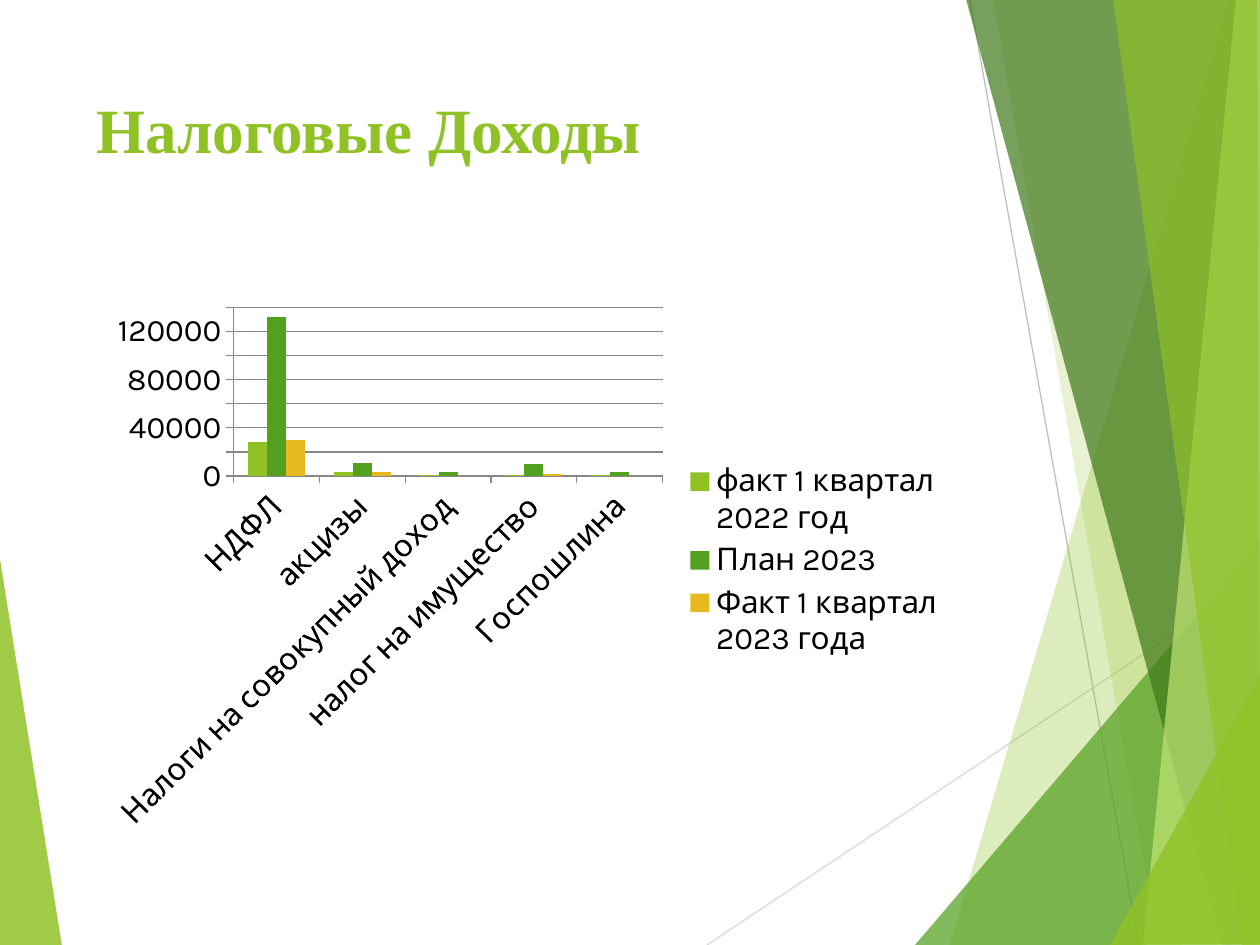
from lxml import etree
from pptx import Presentation
from pptx import util as u
from pptx.chart.data import CategoryChartData
from pptx.dml.color import RGBColor
from pptx.enum import chart as ch, shapes, text
from pptx.oxml.ns import qn

W, H = 1260, 945
LIME, GREEN, GOLD = "90C226", "54A021", "E6B91E"

# Decoration, back to front: outline in px, colour, opacity in percent
LEFT_WEDGE = ([(-1, 553), (62, 946), (-1, 945)], LIME, 85)
RIGHT_BANDS = [
    ([(1229, 0), (950, 945), (1262, 946), (1261, 1)], LIME, 30),
    ([(993, -1), (1158, 945), (1261, 945), (1261, -1)], LIME, 20),
    ([(915, 945), (1260, 541), (1261, 945)], GREEN, 72),
    ([(966, -1), (1222, 945), (1261, 944), (1261, -1)], "3F7819", 70),
    ([(1236, -1), (1143, 945), (1261, 945), (1260, -1)], "C0E474", 70),
    ([(1113, -1), (1242, 945), (1260, 945), (1257, -1)], LIME, 65),
    ([(1110, 945), (1261, 674), (1261, 944)], LIME, 80),
]
LINES = [((707, 945), (1261, 576), "D9D9D9"), ((970, 0), (1139, 945), "BFBFBF")]

CATEGORIES = ["НДФЛ", "акцизы", "Налоги на совокупный доход",
              "налог на имущество", "Госпошлина"]
SERIES = [
    ("факт 1 квартал 2022 год", [28000, 3000, 1000, 1000, 1000], LIME),
    ("План 2023", [132000, 11000, 3000, 10000, 3000], GREEN),
    ("Факт 1 квартал 2023 года", [30000, 3000, 0, 2000, 0], GOLD),
]


def px(n):
    return u.Emu(round(n * 914400 / 126))


def rgb(value):
    return RGBColor.from_string(value)


def add_band(s, points, color, opacity):
    builder = s.shapes.build_freeform(*points[0], scale=914400 / 126)
    builder.add_line_segments(points[1:], close=True)
    sp = builder.convert_to_shape()
    sp.shadow.inherit = False
    sp.line.fill.background()
    sp.fill.solid()
    sp.fill.fore_color.rgb = rgb(color)
    clr = sp.fill._xPr.find(qn("a:solidFill"))[0]
    etree.SubElement(clr, qn("a:alpha")).set("val", str(opacity * 1000))


def add_line(s, start, end, color):
    line = s.shapes.add_connector(shapes.MSO_CONNECTOR.STRAIGHT,
                                  *map(px, start + end))
    line.line.color.rgb = rgb(color)
    line.line.width = u.Pt(0.75)
    etree.SubElement(line._element.spPr, qn("a:effectLst"))


def set_title(s, words):
    title = s.shapes.title
    title.left, title.top, title.width, title.height = map(px, (84, 84, 874, 181))
    tf = title.text_frame
    tf.text = words
    tf.word_wrap = True
    tf.vertical_anchor = text.MSO_ANCHOR.TOP
    tf.margin_top = px(7)
    p = tf.paragraphs[0]
    p.alignment = text.PP_ALIGN.LEFT
    p.font.name, p.font.size, p.font.bold = "Times New Roman", u.Pt(36), True
    p.font.color.rgb = rgb(LIME)


def add_tax_chart(s):
    data = CategoryChartData()
    data.categories = CATEGORIES
    for name, values, _ in SERIES:
        data.add_series(name, values)
    chart = s.shapes.add_chart(ch.XL_CHART_TYPE.COLUMN_CLUSTERED,
                               *map(px, (84, 297, 874, 534)), data).chart
    chart.has_title = False
    chart.font.name, chart.font.size = "Karla", u.Pt(18)
    chart.font.color.rgb = rgb("000000")
    chart.has_legend = True
    chart.legend.position = ch.XL_LEGEND_POSITION.RIGHT
    chart.legend.include_in_layout = False

    # Columns
    plot = chart.plots[0]
    plot.gap_width, plot.overlap, plot.vary_by_categories = 150, 0, False
    for series, (_, _, color) in zip(plot.series, SERIES):
        series.format.fill.solid()
        series.format.fill.fore_color.rgb = rgb(color)

    # Axes, with slanted category labels
    val, cat = chart.value_axis, chart.category_axis
    val.minimum_scale, val.maximum_scale, val.major_unit = 0, 140000, 20000
    val.has_major_gridlines = True
    for part in (val, cat, val.major_gridlines):
        part.format.line.color.rgb = rgb("878787")
        part.format.line.width = u.Pt(0.75)
    for axis in (val, cat):
        axis.major_tick_mark = ch.XL_TICK_MARK.OUTSIDE
    cat.tick_labels.font.size = u.Pt(18)
    cat._element.find(qn("c:txPr")).find(qn("a:bodyPr")).set("rot", "-2700000")


def main():
    prs = Presentation()
    prs.slide_width, prs.slide_height = px(W), px(H)
    s = prs.slides.add_slide(prs.slide_layouts[5])

    # Background decoration
    add_band(s, *LEFT_WEDGE)
    for line in LINES:
        add_line(s, *line)
    for band in RIGHT_BANDS:
        add_band(s, *band)

    # Content
    set_title(s, "Налоговые Доходы")
    add_tax_chart(s)
    prs.save("out.pptx")


if __name__ == "__main__":
    main()
